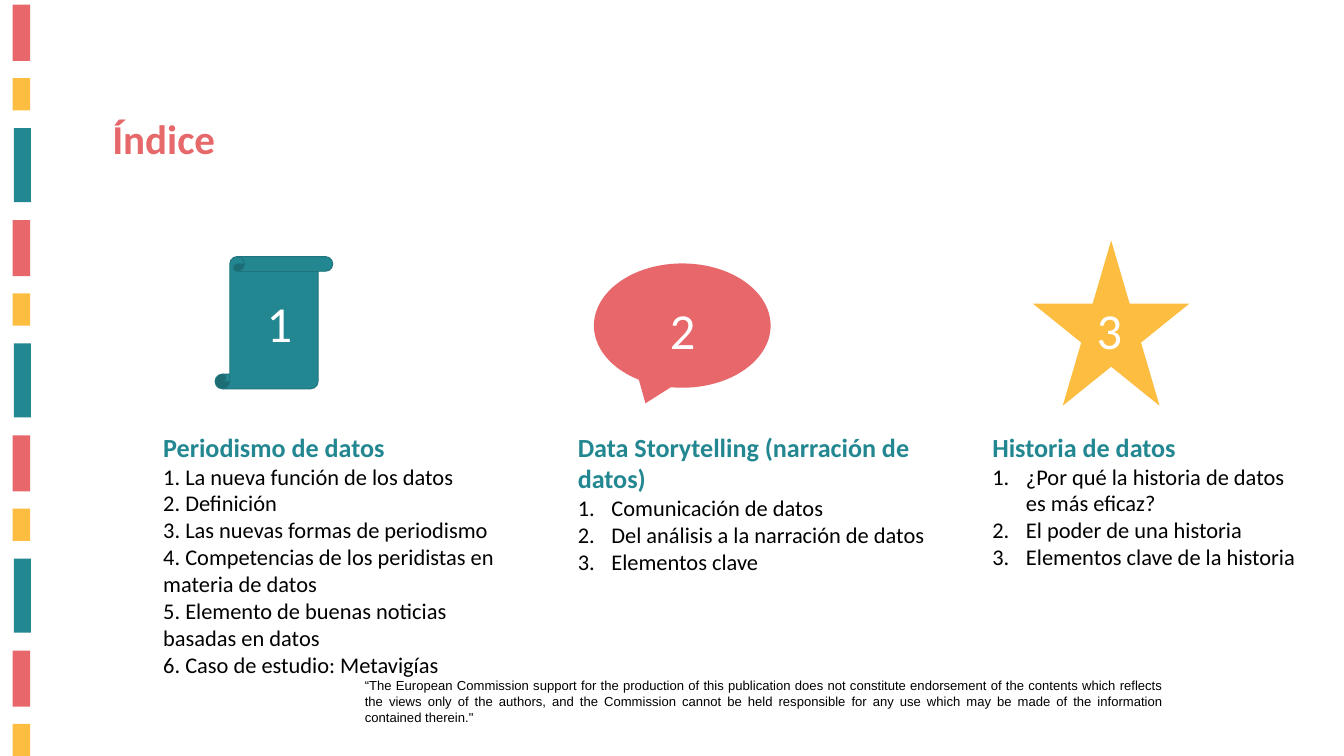
from lxml.etree import SubElement
from pptx import Presentation
from pptx.dml.color import RGBColor
from pptx.enum.shapes import MSO_SHAPE as Preset
from pptx.enum.text import MSO_ANCHOR as Anchor, MSO_AUTO_SIZE as AutoSize, PP_ALIGN as Align
from pptx.oxml.ns import qn
from pptx.util import Cm, Pt

CORAL = RGBColor(0xE8, 0x67, 0x6A)
TITLE_CORAL = RGBColor(0xE7, 0x68, 0x6A)
YELLOW = RGBColor(0xFD, 0xBD, 0x40)
TEAL = RGBColor(0x23, 0x87, 0x91)
DARK_TEAL = RGBColor(0x1E, 0x73, 0x7C)
BLACK = RGBColor(0, 0, 0)
WHITE = RGBColor(0xFF, 0xFF, 0xFF)

DISCLAIMER = (
    "“The European Commission support for the production of this publication does not "
    "constitute endorsement of the contents which reflects the views only of the authors, "
    "and the Commission cannot be held responsible for any use which may be made of the "
    "information contained therein.\""
)

# Stripe pattern, in cm: left, top, width, height, colour
STRIPES = [
    (0.48, 0.18, 0.66, 2.12, CORAL),
    (0.48, 2.95, 0.66, 1.22, YELLOW),
    (0.53, 4.84, 0.64, 2.8, TEAL),
]
STRIPE_PERIOD = 8.14
STRIPE_COUNT = 11

# Each section: icon (preset, box, fill, line), number box, text box, heading, entries, numbered
SECTIONS = [
    ((Preset.VERTICAL_SCROLL, (8.13, 9.7, 4.45, 5), TEAL, DARK_TEAL),
     (9.83, 10.92, 4.01, 2.57), (5.92, 16.18, 13.54, 10.85), "Periodismo de datos",
     ["1. La nueva función de los datos", "2. Definición",
      "3. Las nuevas formas de periodismo",
      "4. Competencias de los peridistas en materia de datos",
      "5. Elemento de buenas noticias basadas en datos",
      "6. Caso de estudio: Metavigías"], False),
    ((Preset.OVAL_CALLOUT, (22.45, 9.96, 6.68, 4.7), CORAL, None),
     (25.07, 11.2, 2.74, 2.57), (21.59, 16.18, 15.24, 5.74),
     "Data Storytelling (narración de datos)",
     ["Comunicación de datos", "Del análisis a la narración de datos",
      "Elementos clave"], True),
    ((Preset.STAR_5_POINT, (39.04, 9.09, 5.92, 6.25), YELLOW, None),
     (41.2, 11.2, 3.81, 2.57), (37.26, 16.18, 12.27, 5.56), "Historia de datos",
     ["¿Por qué la historia de datos es más eficaz?", "El poder de una historia",
      "Elementos clave de la historia"], True),
]


class SlideBuilder:
    font = "Calibri"

    def __init__(self, slide):
        self.slide = slide

    def style(self, paragraph, size, color, bold=False, font=None):
        face = paragraph.font
        face.name = font or self.font
        face.size = Pt(size)
        face.bold = bold
        face.color.rgb = color

    def title(self, text, box):
        heading = self.slide.shapes.title
        heading.left, heading.top, heading.width, heading.height = map(Cm, box)
        frame = heading.text_frame
        frame.text = text
        frame.auto_size = AutoSize.NONE
        frame.vertical_anchor = Anchor.TOP
        line = frame.paragraphs[0]
        line.alignment = Align.LEFT
        line.line_spacing = 1
        line.space_before = Pt(0)
        self.style(line, 44, TITLE_CORAL, bold=True)

    def shape(self, preset, box, fill, line=None):
        figure = self.slide.shapes.add_shape(preset, *map(Cm, box))
        figure.shadow.inherit = False
        figure.fill.solid()
        figure.fill.fore_color.rgb = fill
        if line is None:
            figure.line.fill.background()
        else:
            figure.line.color.rgb = line
            figure.line.width = Pt(1)

    def frame(self, box):
        frame = self.slide.shapes.add_textbox(*map(Cm, box)).text_frame
        frame.word_wrap = True
        return frame

    def text(self, text, box, size, color, font=None, align=Align.LEFT):
        line = self.frame(box).paragraphs[0]
        line.text = text
        line.alignment = align
        self.style(line, size, color, font=font)

    def section(self, heading, entries, box, numbered):
        frame = self.frame(box)
        frame.text = heading
        self.style(frame.paragraphs[0], 28, TEAL, bold=True)
        for entry in entries:
            line = frame.add_paragraph()
            line.text = entry
            if numbered:
                self.number(line)
            self.style(line, 24, BLACK)

    def number(self, paragraph):
        """Give the paragraph automatic numbering with a hanging indent."""
        properties = paragraph._p.get_or_add_pPr()
        properties.set("marL", str(Cm(1.27)))
        properties.set("indent", str(-Cm(1.27)))
        SubElement(properties, qn("a:buFont"), typeface="+mj-lt")
        SubElement(properties, qn("a:buAutoNum"), type="arabicPeriod")


def main():
    deck = Presentation()
    deck.slide_width, deck.slide_height = Cm(50.8), Cm(28.58)
    builder = SlideBuilder(deck.slides.add_slide(deck.slide_layouts[5]))

    for index in range(STRIPE_COUNT):
        cycle, step = divmod(index, len(STRIPES))
        left, top, width, height, color = STRIPES[step]
        builder.shape(Preset.RECTANGLE,
                      (left, top + cycle * STRIPE_PERIOD, width, height), color)

    builder.text(DISCLAIMER, (13.54, 25.5, 30.68, 2.06), 14, BLACK, "Arial", Align.JUSTIFY)
    builder.title("Índice", (3.99, 4.17, 17.2, 2.13))

    for position, section in enumerate(SECTIONS, start=1):
        icon, number_box, text_box, heading, entries, numbered = section
        builder.shape(*icon)
        builder.section(heading, entries, text_box, numbered)
        builder.text(str(position), number_box, 54, WHITE)

    deck.save("out.pptx")


if __name__ == "__main__":
    main()
